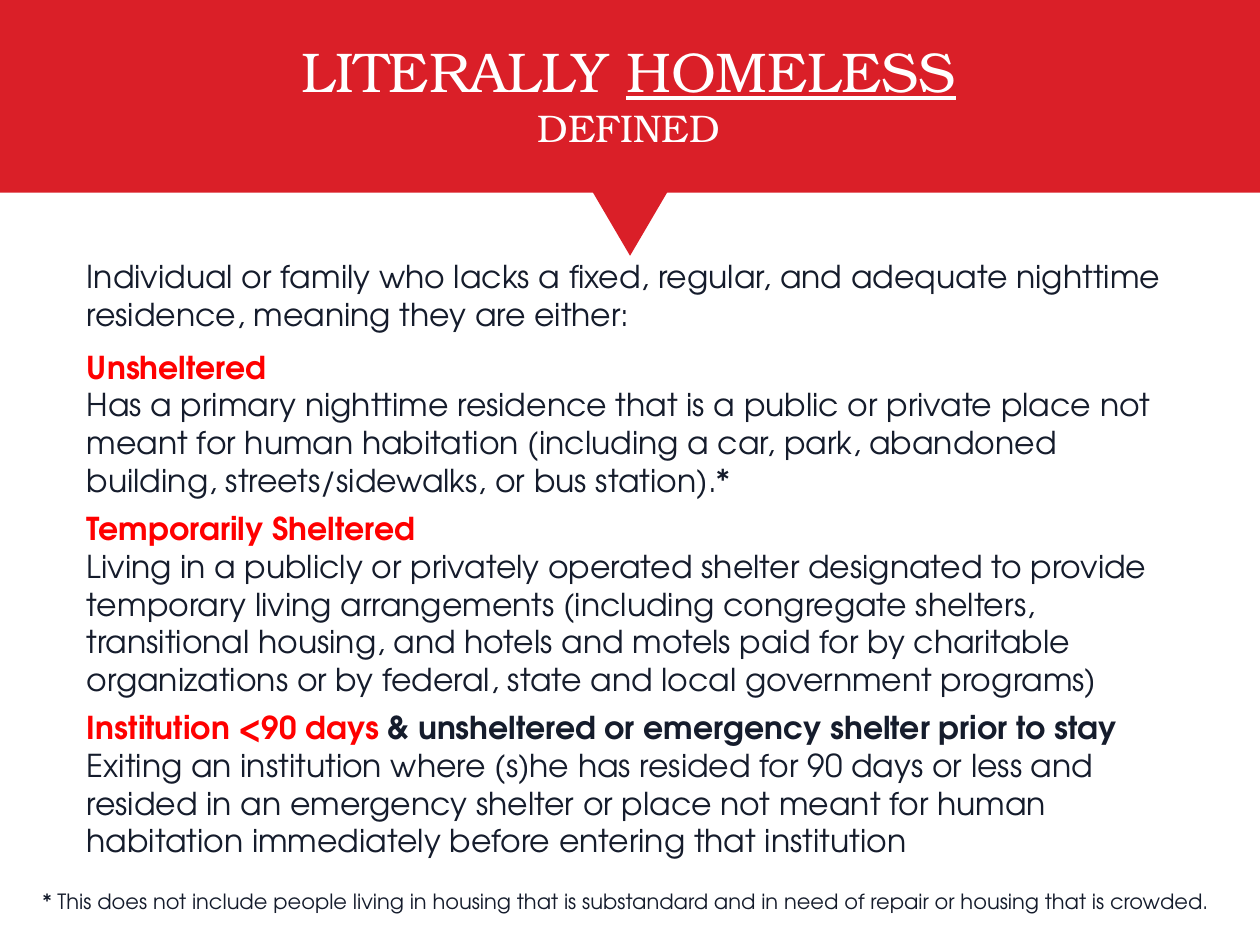
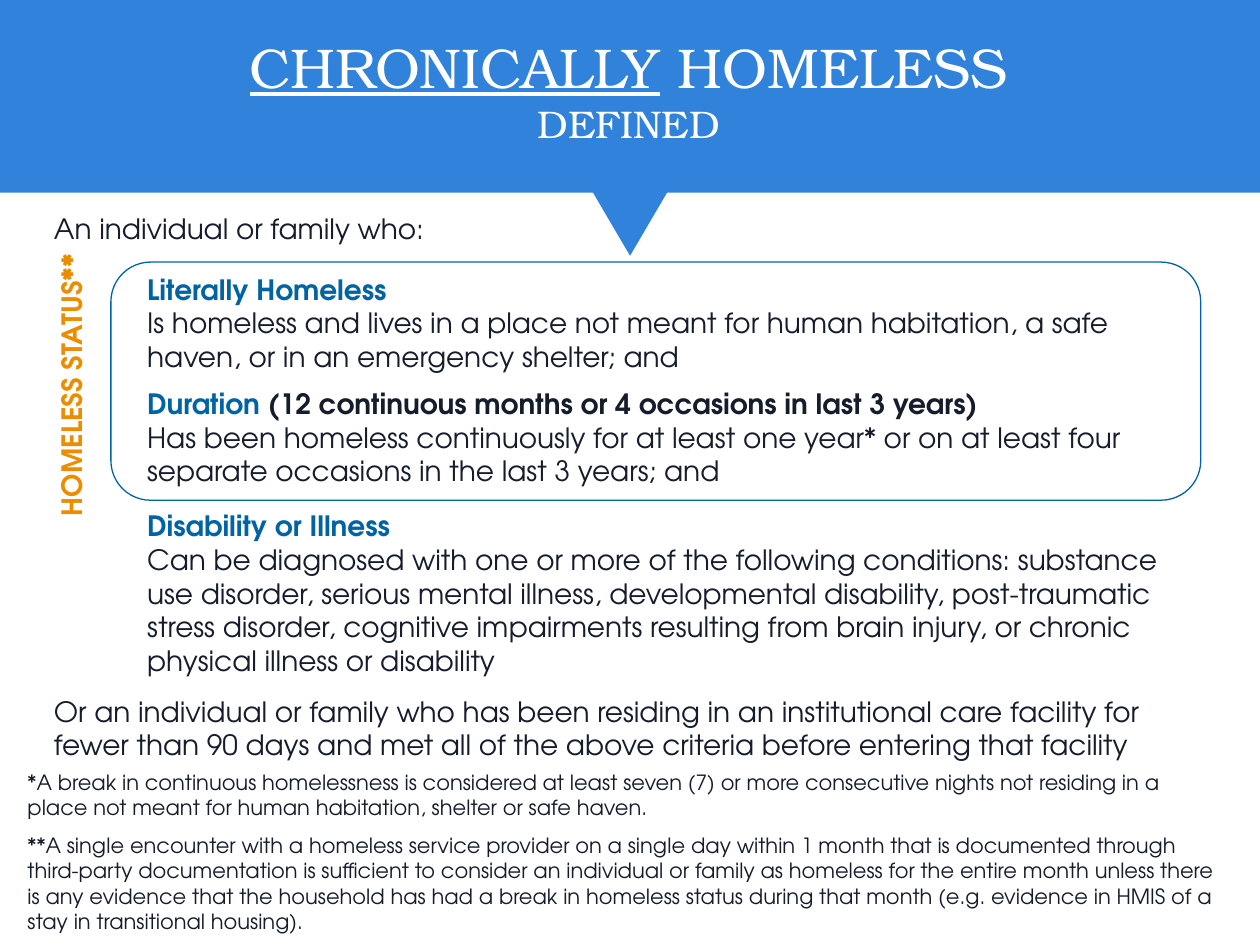
from pptx import Presentation
from pptx import util as u
from pptx.dml.color import RGBColor
from pptx.enum import shapes, text

RED = RGBColor(0xDA, 0x1F, 0x28)
BLUE = RGBColor(0x31, 0x82, 0xDA)
BRIGHT_RED = RGBColor(0xFF, 0x00, 0x00)
DEEP_BLUE = RGBColor(0x00, 0x63, 0xA3)
ORANGE = RGBColor(0xEB, 0x8D, 0x00)
INK = RGBColor(0x15, 0x1C, 0x2C)
WHITE = RGBColor(0xFF, 0xFF, 0xFF)

BODY_FONT = "TeX Gyre Adventor"
TITLE_FONT = "TeX Gyre Bonum"
SLIDE_WIDTH, SLIDE_HEIGHT = 10, 7.5
BAND_HEIGHT = 1.53
POINTER_WIDTH, POINTER_HEIGHT = 0.61, 0.52
NOTE_SIZE = 12


def inches(box):
    return [u.Inches(length) for length in box]


def add_text(slide, box, paragraphs, size, align=text.PP_ALIGN.LEFT, **common):
    """Each paragraph is a list of (words, format values) runs."""
    shape = slide.shapes.add_textbox(*inches(box))
    frame = shape.text_frame
    frame.word_wrap = True
    frame.auto_size = text.MSO_AUTO_SIZE.SHAPE_TO_FIT_TEXT
    for index, runs in enumerate(paragraphs):
        paragraph = frame.paragraphs[0] if index == 0 else frame.add_paragraph()
        paragraph.alignment = align
        for words, values in runs:
            run = paragraph.add_run()
            run.text = words
            values = {"name": BODY_FONT, "size": u.Pt(size), "color": INK, **common, **values}
            run.font.color.rgb = values.pop("color")
            for name, value in values.items():
                setattr(run.font, name, value)
    return shape


def add_plain(slide, box, words, size):
    return add_text(slide, box, [[(words, {})]], size)


def add_preset(slide, kind, box, fill=None, line=None):
    shape = slide.shapes.add_shape(kind, *inches(box))
    shape.shadow.inherit = False
    if fill is None:
        shape.fill.background()
    else:
        shape.fill.solid()
        shape.fill.fore_color.rgb = fill
    if line is None:
        shape.line.fill.background()
    else:
        shape.line.color.rgb = line
        shape.line.width = u.Pt(0.75)
    return shape


def add_header(slide, title_runs, title_top, color):
    """Colour band, downward pointer and two-line title."""
    add_preset(slide, shapes.MSO_SHAPE.RECTANGLE, (0, 0, SLIDE_WIDTH, BAND_HEIGHT), color)
    pointer = add_preset(
        slide, shapes.MSO_SHAPE.ISOSCELES_TRIANGLE,
        ((SLIDE_WIDTH - POINTER_WIDTH) / 2, BAND_HEIGHT - 0.02, POINTER_WIDTH, POINTER_HEIGHT),
        color)
    pointer.rotation = 180
    add_text(slide, (0.45, title_top, 9.08, 1.04),
             [title_runs, [("DEFINED", {"size": u.Pt(22)})]],
             32, text.PP_ALIGN.CENTER, name=TITLE_FONT, color=WHITE)


def add_definition(slide, box, term, meaning, size, color, condition=""):
    """Bold coloured term, optional bold condition, then its meaning."""
    heading = [(term, {"bold": True, "color": color})]
    if condition:
        heading.append((condition, {"bold": True}))
    add_text(slide, box, [heading, [(meaning, {})]], size)


def build_literally_homeless(slide):
    size, left, width = 18, 0.59, 8.95
    add_header(slide, [("LITERALLY ", {}), ("HOMELESS", {"underline": True})], 0.24, RED)
    add_plain(slide, (left, 1.99, width, 0.71),
              "Individual or family who lacks a fixed, regular, and adequate nighttime "
              "residence, meaning they are either:", size)

    # The three situations
    situations = [
        (2.71, 1.31, "Unsheltered", "",
         "Has a primary nighttime residence that is a public or private place not meant "
         "for human habitation (including a car, park, abandoned building, "
         "streets/sidewalks, or bus station).*"),
        (3.99, 1.62, "Temporarily Sheltered", "",
         "Living in a publicly or privately operated shelter designated to provide "
         "temporary living arrangements (including congregate shelters, transitional "
         "housing, and hotels and motels paid for by charitable organizations or by "
         "federal, state and local government programs)"),
        (5.57, 1.31, "Institution <90 days ", "& unsheltered or emergency shelter prior to stay",
         "Exiting an institution where (s)he has resided for 90 days or less and resided "
         "in an emergency shelter or place not meant for human habitation immediately "
         "before entering that institution"),
    ]
    for top, height, term, condition, meaning in situations:
        add_definition(slide, (left, top, width, height), term, meaning, size,
                       BRIGHT_RED, condition)

    # Footnote
    add_plain(slide, (0.24, 7, 9.61, 0.3),
              "* This does not include people living in housing that is substandard and "
              "in need of repair or housing that is crowded.", NOTE_SIZE)


def add_status_frame(slide, box):
    """Rounded outline with a vertical label to its left."""
    left, top, width, height = box
    add_preset(slide, shapes.MSO_SHAPE.ROUNDED_RECTANGLE, box, line=DEEP_BLUE)
    label_width, label_height = 2.58, 0.37
    center_x, center_y = left - 0.31, top + height / 2 + 0.03
    label = add_text(
        slide,
        (center_x - label_width / 2, center_y - label_height / 2, label_width, label_height),
        [[("HOMELESS STATUS**", {})]], 16, text.PP_ALIGN.CENTER, color=ORANGE, bold=True)
    label.rotation = 270


def build_chronically_homeless(slide):
    size, left, width = 16, 0.33, 8.95
    add_header(slide, [("CHRONICALLY", {"underline": True}), (" HOMELESS", {})], 0.21, BLUE)
    add_plain(slide, (left, 1.63, width, 0.37), "An individual or family who:", size)

    # The three criteria, two of them framed
    criteria = [
        (2.11, 0.91, "Literally Homeless", "",
         "Is homeless and lives in a place not meant for human habitation, a safe haven, "
         "or in an emergency shelter; and"),
        (3.02, 0.91, "Duration ", "(12 continuous months or 4 occasions in last 3 years)",
         "Has been homeless continuously for at least one year* or on at least four "
         "separate occasions in the last 3 years; and"),
        (3.99, 1.45, "Disability or Illness", "",
         "Can be diagnosed with one or more of the following conditions: substance use "
         "disorder, serious mental illness, developmental disability, post-traumatic "
         "stress disorder, cognitive impairments resulting from brain injury, or chronic "
         "physical illness or disability"),
    ]
    for top, height, term, condition, meaning in criteria:
        add_definition(slide, (1.07, top, 8.46, height), term, meaning, size,
                       DEEP_BLUE, condition)
    add_status_frame(slide, (0.88, 2.08, 8.65, 1.89))

    add_plain(slide, (left, 5.46, width, 0.64),
              "Or an individual or family who has been residing in an institutional care "
              "facility for fewer than 90 days and met all of the above criteria before "
              "entering that facility", size)

    # Footnotes
    footnotes = [
        (6.06, 0.5,
         "*A break in continuous homelessness is considered at least seven (7) or more "
         "consecutive nights not residing in a place not meant for human habitation, "
         "shelter or safe haven."),
        (6.56, 0.91,
         "**A single encounter with a homeless service provider on a single day within 1 "
         "month that is documented through third-party documentation is sufficient to "
         "consider an individual or family as homeless for the entire month unless there "
         "is any evidence that the household has had a break in homeless status during "
         "that month (e.g. evidence in HMIS of a stay in transitional housing)."),
    ]
    for top, height, words in footnotes:
        add_plain(slide, (0.12, top, 9.67, height), words, NOTE_SIZE)


def main():
    presentation = Presentation()
    presentation.slide_width = u.Inches(SLIDE_WIDTH)
    presentation.slide_height = u.Inches(SLIDE_HEIGHT)
    blank = presentation.slide_layouts[6]
    for build in (build_literally_homeless, build_chronically_homeless):
        build(presentation.slides.add_slide(blank))
    presentation.save("out.pptx")


if __name__ == "__main__":
    main()
